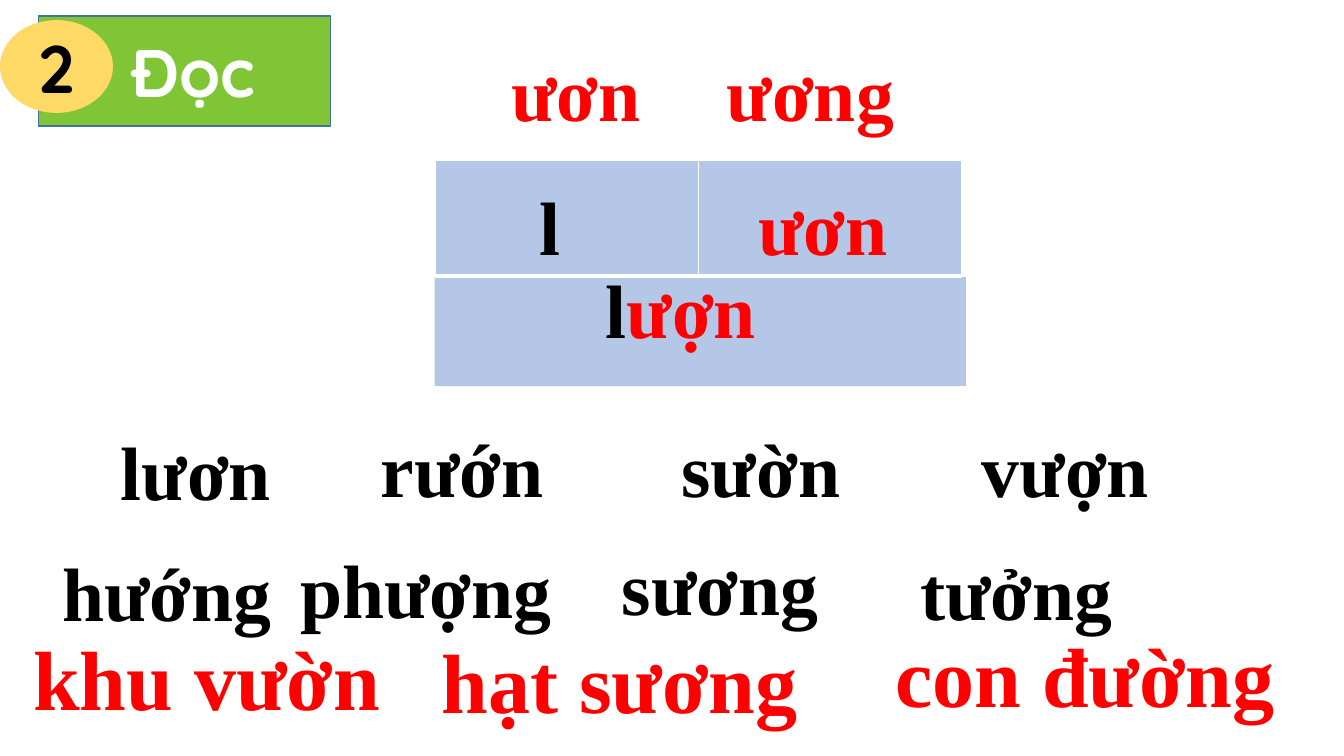
from dataclasses import dataclass
from typing import NamedTuple

from lxml.etree import SubElement
from pptx import Presentation
from pptx.dml.color import RGBColor
from pptx.enum.shapes import MSO_SHAPE
from pptx.enum.text import MSO_ANCHOR, MSO_AUTO_SIZE, PP_ALIGN
from pptx.oxml.ns import qn
from pptx.shapes.autoshape import Shape
from pptx.slide import Slide
from pptx.table import _Cell as Cell
from pptx.text.text import TextFrame
from pptx.util import Pt

EMU_PER_PX = 9144  # 100 px to the inch


@dataclass(frozen=True)
class Theme:
    black: str = "000000"
    white: str = "FFFFFF"
    red: str = "FF0000"
    blue: str = "B4C7E7"
    green: str = "80C535"
    green_edge: str = "43739E"
    yellow: str = "FFD966"
    reading_font: str = "Times New Roman"
    heading_font: str = "Quicksand"
    heading_size: int = 48
    word_size: int = 54
    phrase_size: int = 60


THEME = Theme()


class Box(NamedTuple):
    left: int
    top: int
    width: int
    height: int

    def emu(self) -> list[int]:
        return [px(length) for length in self]


class Piece(NamedTuple):
    text: str
    color: str


class Reading(NamedTuple):
    box: Box
    pieces: list[Piece]
    size: int = THEME.word_size


def px(length: int) -> int:
    return length * EMU_PER_PX


def rgb(color: str) -> RGBColor:
    return RGBColor.from_string(color)


def black(text: str) -> list[Piece]:
    return [Piece(text, THEME.black)]


def red(text: str) -> list[Piece]:
    return [Piece(text, THEME.red)]


WORD_HEIGHT, PHRASE_HEIGHT = 101, 111
READINGS = [
    Reading(Box(591, 256, 206, WORD_HEIGHT), black("l") + red("ượn")),
    Reading(Box(497, 41, 169, WORD_HEIGHT), red("ươn")),
    Reading(Box(711, 41, 325, WORD_HEIGHT), red("ương")),
    Reading(Box(525, 174, 169, WORD_HEIGHT), black("l")),
    Reading(Box(742, 174, 169, WORD_HEIGHT), red("ươn")),
    Reading(Box(110, 417, 258, WORD_HEIGHT), black("lươn")),
    Reading(Box(368, 414, 258, WORD_HEIGHT), black("rướn")),
    Reading(Box(666, 414, 258, WORD_HEIGHT), black("sườn")),
    Reading(Box(964, 414, 258, WORD_HEIGHT), black("vượn")),
    Reading(Box(52, 537, 258, WORD_HEIGHT), black("hướng")),
    Reading(Box(288, 534, 323, WORD_HEIGHT), black("phượng")),
    Reading(Box(607, 531, 258, WORD_HEIGHT), black("sương")),
    Reading(Box(903, 536, 258, WORD_HEIGHT), black("tưởng")),
    Reading(Box(23, 617, 459, PHRASE_HEIGHT), red("khu vườn"), THEME.phrase_size),
    Reading(Box(428, 620, 459, PHRASE_HEIGHT), red("hạt sương"), THEME.phrase_size),
    Reading(Box(878, 614, 459, PHRASE_HEIGHT), red("con đường"), THEME.phrase_size),
]


def add_run(frame: TextFrame, piece: Piece, size: int, font_name: str) -> None:
    run = frame.paragraphs[0].add_run()
    run.text = piece.text
    run.font.name = font_name
    run.font.size = Pt(size)
    run.font.bold = True
    run.font.color.rgb = rgb(piece.color)


def add_heading_text(shape: Shape, piece: Piece) -> None:
    frame = shape.text_frame
    frame.auto_size = MSO_AUTO_SIZE.NONE
    frame.vertical_anchor = MSO_ANCHOR.MIDDLE
    frame.paragraphs[0].alignment = PP_ALIGN.CENTER
    add_run(frame, piece, THEME.heading_size, THEME.heading_font)


def add_plain_shape(slide: Slide, kind: MSO_SHAPE, box: Box, color: str) -> Shape:
    shape = slide.shapes.add_shape(kind, *box.emu())
    shape.shadow.inherit = False
    shape.fill.solid()
    shape.fill.fore_color.rgb = rgb(color)
    shape.line.fill.background()
    return shape


def format_title(slide: Slide) -> None:
    """Turn the title placeholder into the green rounded banner."""
    title = slide.shapes.title
    title.left, title.top, title.width, title.height = Box(38, 16, 290, 109).emu()
    outline = SubElement(title._element.spPr, qn("a:prstGeom"), prst="roundRect")
    SubElement(outline, qn("a:avLst"))
    title.fill.solid()
    title.fill.fore_color.rgb = rgb(THEME.green)
    title.line.color.rgb = rgb(THEME.green_edge)
    title.line.width = Pt(1)
    title.text_frame.margin_left = px(27)
    add_heading_text(title, Piece("Đọc", THEME.white))


def set_borders(cell: Cell, color: str) -> None:
    properties = cell._tc.get_or_add_tcPr()
    for side, points in {"L": 1, "R": 1, "T": 1, "B": 3}.items():
        line = SubElement(properties, qn(f"a:ln{side}"), w=str(Pt(points)))
        SubElement(SubElement(line, qn("a:solidFill")), qn("a:srgbClr"), val=color)


def add_sound_table(slide: Slide) -> None:
    table = slide.shapes.add_table(1, 2, *Box(432, 159, 522, 115).emu()).table
    for cell in table.iter_cells():
        set_borders(cell, THEME.white)
        cell.fill.solid()
        cell.fill.fore_color.rgb = rgb(THEME.blue)


def add_reading(slide: Slide, reading: Reading) -> None:
    frame = slide.shapes.add_textbox(*reading.box.emu()).text_frame
    frame.word_wrap = True
    frame.auto_size = MSO_AUTO_SIZE.SHAPE_TO_FIT_TEXT
    for piece in reading.pieces:
        add_run(frame, piece, reading.size, THEME.reading_font)


def main() -> None:
    deck = Presentation()
    deck.slide_width, deck.slide_height = px(1333), px(750)
    slide = deck.slides.add_slide(deck.slide_layouts[5])

    format_title(slide)
    number = add_plain_shape(slide, MSO_SHAPE.OVAL, Box(0, 20, 112, 92), THEME.yellow)
    add_heading_text(number, Piece("2", THEME.black))
    add_plain_shape(slide, MSO_SHAPE.RECTANGLE, Box(431, 275, 527, 108), THEME.blue)
    add_sound_table(slide)
    for reading in READINGS:
        add_reading(slide, reading)

    deck.save("out.pptx")


if __name__ == "__main__":
    main()
